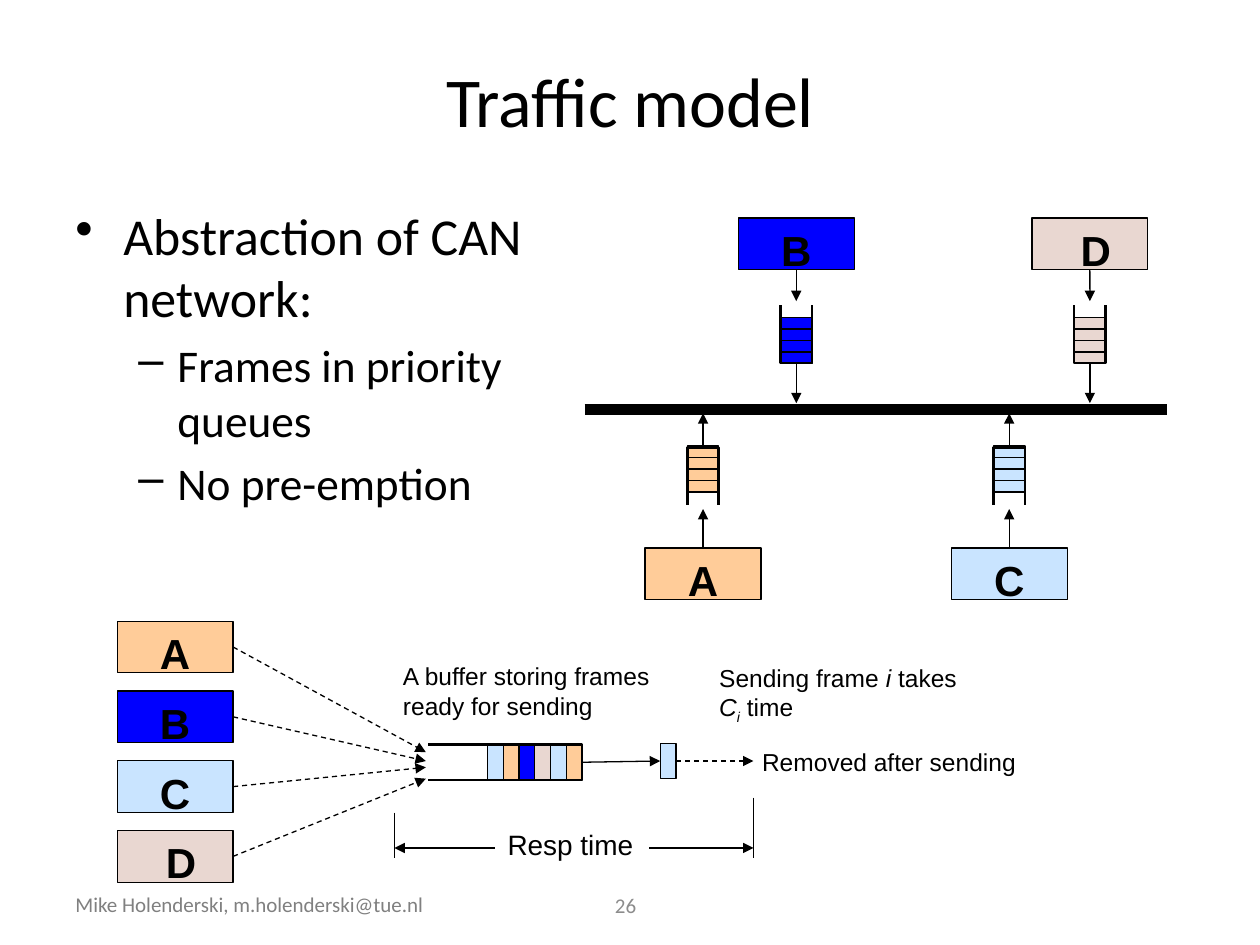
from dataclasses import dataclass

from pptx import Presentation
from pptx.dml.color import RGBColor
from pptx.enum.dml import MSO_LINE_DASH_STYLE as Dash
from pptx.enum.shapes import MSO_CONNECTOR as Connector, MSO_SHAPE as Shape
from pptx.enum.text import MSO_ANCHOR as Anchor, PP_ALIGN as Align
from pptx.oxml.ns import qn
from pptx.util import Inches, Pt
from lxml.etree import SubElement

# The page is a square grid: 100 columns by 75 rows
COLUMNS, ROWS = 100, 75
TOP, LEFT, BOTTOM, RIGHT = range(4)
BOX_WIDTH, BOX_HEIGHT = 9.2, 4.1


@dataclass(frozen=True)
class Theme:
    heading: str = "Calibri"
    label: str = "Arial"
    ink: str = "000000"
    paper: str = "FFFFFF"
    footer: str = "808080"
    number: str = "8C8C8C"
    title_size: float = 40
    bullet_size: float = 29.6
    dash_size: float = 25.9
    node_size: float = 24
    response_size: float = 16
    note_size: float = 14
    footer_size: float = 12
    thin: float = 0.75
    wall: float = 1.5


THEME = Theme()
NODE_FILLS = {"A": "FFCC99", "B": "0000FF", "C": "C9E4FF", "D": "E9D7D1"}
NODE_LABELS = {"A": "A", "B": "B", "C": "C", "D": " D"}


def grid(*lengths):
    return [Inches(length / 10) for length in lengths]


def style(para, size, font=THEME.label, color=THEME.ink, bold=None, align=None):
    para.font.name, para.font.size, para.font.bold = font, Pt(size), bold
    para.font.color.rgb = RGBColor.from_string(color)
    para.alignment = align


def add_text(page, place, text, size, anchor=Anchor.TOP, **looks):
    box = page.shapes.add_textbox(*grid(*place))
    box.text_frame.word_wrap = True
    box.text_frame.vertical_anchor = anchor
    para = box.text_frame.paragraphs[0]
    para.text = text
    style(para, size, **looks)
    return box


def add_rect(page, place, fill=None, line=THEME.thin):
    rect = page.shapes.add_shape(Shape.RECTANGLE, *grid(*place))
    rect.shadow.inherit = False
    if fill:
        rect.fill.solid()
        rect.fill.fore_color.rgb = RGBColor.from_string(fill)
    else:
        rect.fill.background()
    if line:
        rect.line.color.rgb = RGBColor.from_string(THEME.ink)
        rect.line.width = Pt(line)
    else:
        rect.line.fill.background()
    return rect


def label_rect(rect, text, size, **looks):
    frame = rect.text_frame
    frame.word_wrap = True
    frame.vertical_anchor = Anchor.TOP
    frame.paragraphs[0].text = text
    style(frame.paragraphs[0], size, **looks)


def add_node(page, name, left, top):
    node = add_rect(page, (left, top, BOX_WIDTH, BOX_HEIGHT), NODE_FILLS[name])
    label_rect(node, NODE_LABELS[name], THEME.node_size, bold=True, align=Align.CENTER)
    return node


def add_line(page, start, end, arrows=(), dashed=False, color=THEME.ink, width=THEME.thin):
    """Each end is a (column, row) point or a (shape, side) joint."""
    points = [(0, 0) if hasattr(thing, "shape_id") else (thing, other)
              for thing, other in (start, end)]
    line = page.shapes.add_connector(Connector.STRAIGHT, *grid(*points[0], *points[1]))
    for joint, connect in ((start, line.begin_connect), (end, line.end_connect)):
        if hasattr(joint[0], "shape_id"):
            connect(*joint)
    line.line.color.rgb = RGBColor.from_string(color)
    line.line.width = Pt(width)
    if dashed:
        line.line.dash_style = Dash.DASH
    for tag in arrows:
        SubElement(line.line._get_or_add_ln(), qn(f"a:{tag}"), type="triangle")
    SubElement(line._element.spPr, qn("a:effectLst"))


def add_arrow(page, start, end, dashed=False):
    add_line(page, start, end, ["tailEnd"], dashed)


def add_bullets(page, place, items):
    frame = page.shapes.add_textbox(*grid(*place)).text_frame
    frame.word_wrap = True
    levels = [("•", 3.8, 3.8, THEME.bullet_size), ("–", 8.1, 3.1, THEME.dash_size)]
    for index, (level, text) in enumerate(items):
        mark, margin, hanging, size = levels[level]
        para = frame.add_paragraph() if index else frame.paragraphs[0]
        para.text, para.level = text, level
        props = para._p.get_or_add_pPr()
        indent, outdent = grid(margin, hanging)
        props.set("marL", str(indent))
        props.set("indent", str(-outdent))
        SubElement(props, qn("a:buChar"), char=mark)
        if index:
            para.space_before = Pt(size * 0.2)
        style(para, size, THEME.heading)


def add_station(page, name, center, above):
    """A node that feeds the bus through its own queue of four frames."""
    queue_top, frames_top, box_top = (23.9, 25.2, 17.3) if above else (35.5, 35.4, 43.5)
    for index in range(4):
        add_rect(page, (center - 1.25, frames_top + 0.92 * index, 2.5, 0.9), NODE_FILLS[name])
    node = add_node(page, name, center - BOX_WIDTH / 2, box_top)
    queue = add_rect(page, (center - 1.25, queue_top, 2.5, 4.9), line=THEME.wall)
    # The side of the queue that faces its node is open
    mouth = queue_top if above else queue_top + 4.9
    add_line(page, (center - 2.1, mouth), (center + 2.1, mouth), color=THEME.paper, width=4.5)
    near, far = (BOTTOM, TOP) if above else (TOP, BOTTOM)
    add_arrow(page, (node, near), (queue, far))
    add_arrow(page, (queue, near), (center, 32 if above else 32.8))


def add_network(page):
    add_line(page, (46.4, 32.5), (92.6, 32.5), width=6)
    for name, center, above in (("B", 63.2, True), ("D", 86.5, True),
                                ("A", 55.8, False), ("C", 80.1, False)):
        add_station(page, name, center, above)


def add_buffer(page):
    # Shared queue with waiting frames and an open left side
    for index, name in enumerate("CABDCA"):
        add_rect(page, (38.7 + 1.25 * index, 59.1, 1.25, 2.8), NODE_FILLS[name])
    queue = add_rect(page, (33.8, 59.1, 12.4, 2.8), line=THEME.wall)
    add_line(page, (33.8, 55.4), (33.8, 63.3), color=THEME.paper, width=3)

    # Nodes that fill the queue
    for index, (name, entry) in enumerate(zip("ABCD", (59.7, 60.4, 60.9, 61.8))):
        node = add_node(page, name, 9.3, 49.3 + 5.54 * index)
        add_arrow(page, (node, RIGHT), (33.8, entry), dashed=True)

    # Frame being sent
    sent = add_rect(page, (52.4, 59, 1.25, 2.8), NODE_FILLS["C"])
    add_arrow(page, (queue, RIGHT), (sent, LEFT))
    add_arrow(page, (sent, RIGHT), (59.8, 60.4), dashed=True)


def add_response_time(page):
    for column, top in ((31.3, 64.5), (59.8, 63.3)):
        add_line(page, (column, top), (column, 68.1))
    add_line(page, (31.3, 67.3), (59.8, 67.3), ["headEnd", "tailEnd"])
    plate = add_rect(page, (39.3, 65.2, 12.2, 3.7), THEME.paper, line=None)
    label_rect(plate, "Resp time", THEME.response_size, align=Align.LEFT)


def add_notes_on_buffer(page):
    add_text(page, (59.5, 58.8, 26, 3.3), "Removed after sending", THEME.note_size)
    add_text(page, (31, 52, 22.7, 5.7), "A buffer storing frames ready for sending",
             THEME.note_size)
    sending = add_text(page, (56.1, 52.1, 22, 5.7), "", THEME.note_size)
    frame = sending.text_frame
    lines = [[("Sending frame ", False), ("i", True), (" takes", False)],
             [("C", True), ("i", True), (" time", False)]]
    for para, parts in zip((frame.paragraphs[0], frame.add_paragraph()), lines):
        for text, italic in parts:
            span = para.add_run()
            span.text, span.font.italic = text, italic
        style(para, THEME.note_size)
    # Subscript of C
    frame.paragraphs[1].runs[1].font._element.set("baseline", "-25000")


def main():
    deck = Presentation()
    deck.slide_width, deck.slide_height = grid(COLUMNS, ROWS)
    page = deck.slides.add_slide(deck.slide_layouts[6])

    # Title and bullets
    add_text(page, (5, 3, 90, 9.8), "Traffic model", THEME.title_size, Anchor.MIDDLE,
             font=THEME.heading, align=Align.CENTER)
    add_bullets(page, (5, 15.7, 41.2, 22.4), [
        (0, "Abstraction of CAN network:"),
        (1, "Frames in priority queues"),
        (1, "No pre-emption"),
    ])

    # Diagrams
    add_network(page)
    add_buffer(page)
    add_response_time(page)
    add_notes_on_buffer(page)

    # Footer
    add_text(page, (5, 70.3, 39.2, 3), "Mike Holenderski, m.holenderski@tue.nl",
             THEME.footer_size, font=THEME.heading, color=THEME.footer)
    add_text(page, (44.2, 70.3, 10.9, 3), "26", THEME.footer_size, Anchor.MIDDLE,
             font=THEME.heading, color=THEME.number, align=Align.CENTER)
    deck.save("out.pptx")


if __name__ == "__main__":
    main()
